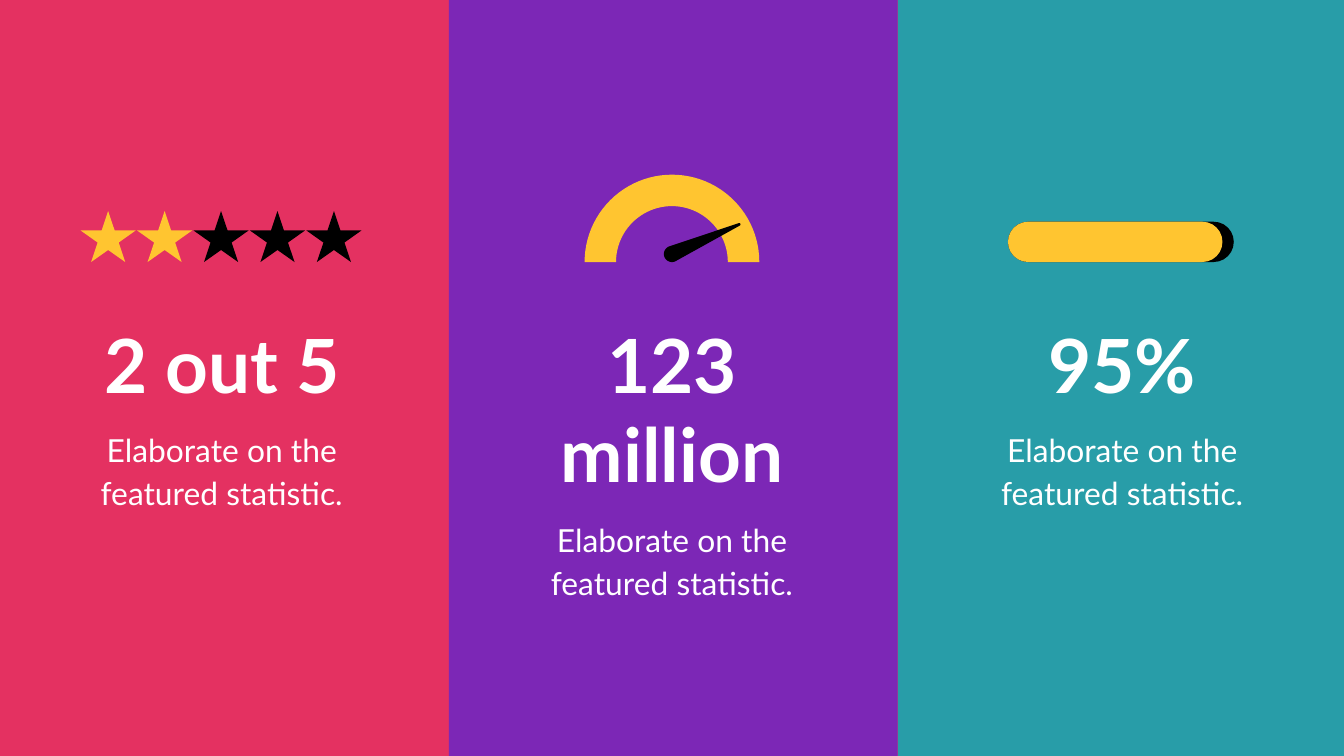
import dataclasses
import math

import pptx
import pptx.dml.color
import pptx.enum.shapes
import pptx.enum.text
import pptx.shapes.shapetree
import pptx.util

Inches = pptx.util.Inches
Color = pptx.dml.color.RGBColor
Shape = pptx.enum.shapes.MSO_SHAPE
GroupShapes = pptx.shapes.shapetree.GroupShapes

RED = Color(0xE4, 0x31, 0x61)
PURPLE = Color(0x7C, 0x27, 0xB6)
TEAL = Color(0x28, 0x9D, 0xA8)
YELLOW = Color(0xFF, 0xC5, 0x30)
BLACK = Color(0x00, 0x00, 0x00)
WHITE = Color(0xFF, 0xFF, 0xFF)

FONT = "Lato"
SLIDE_WIDTH = 10
SLIDE_HEIGHT = SLIDE_WIDTH * 9 / 16
PANEL_WIDTH = 3.34
TEXT_WIDTH = 2.52
TEXT_LEFT, TEXT_STEP = 0.39, 3.35
HEADLINE_TOP, HEADLINE_LINE = 2.37, 0.67
CAPTION_GAP, CAPTION_HEIGHT = 0.12, 0.62
ICON_BOTTOM = 1.95


@dataclasses.dataclass
class Statistic:
    headline: str
    headline_lines: int = 1
    caption: str = "Elaborate on the featured statistic."


STATISTICS = [
    Statistic("2 out 5"),
    Statistic("123 million", headline_lines=2),
    Statistic("95%"),
]


def paint(shape, color: Color) -> None:
    shape.shadow.inherit = False
    shape.fill.solid()
    shape.fill.fore_color.rgb = color
    shape.line.fill.background()


def add_preset(shapes, kind, left: float, top: float, width: float,
               height: float, color: Color):
    shape = shapes.add_shape(kind, Inches(left), Inches(top),
                             Inches(width), Inches(height))
    paint(shape, color)
    return shape


def add_text(page, text: str, *, left: float, top: float, width: float,
             height: float, size: float, bold: bool = False,
             line_spacing: float = 1.0) -> None:
    box = page.shapes.add_textbox(Inches(left), Inches(top),
                                  Inches(width), Inches(height))
    frame = box.text_frame
    frame.margin_left = frame.margin_right = 0
    frame.margin_top = frame.margin_bottom = 0
    frame.word_wrap = True
    frame.auto_size = pptx.enum.text.MSO_AUTO_SIZE.SHAPE_TO_FIT_TEXT
    para = frame.paragraphs[0]
    para.alignment = pptx.enum.text.PP_ALIGN.CENTER
    para.line_spacing = line_spacing
    span = para.add_run()
    span.text = text
    span.font.name = FONT
    span.font.size = pptx.util.Pt(size)
    span.font.bold = bold
    span.font.color.rgb = WHITE


def add_statistic(page, column: int, statistic: Statistic) -> None:
    left = TEXT_LEFT + column * TEXT_STEP
    headline_height = statistic.headline_lines * HEADLINE_LINE
    add_text(page, statistic.headline, left=left, top=HEADLINE_TOP,
             width=TEXT_WIDTH, height=headline_height, size=40, bold=True)
    add_text(page, statistic.caption, left=left,
             top=HEADLINE_TOP + headline_height + CAPTION_GAP,
             width=TEXT_WIDTH, height=CAPTION_HEIGHT, size=17,
             line_spacing=1.15)


def add_rating(shapes: GroupShapes, score: int, total: int) -> None:
    width, height, step = 0.41, 0.38, 0.42
    for index in range(total):
        color = YELLOW if index < score else BLACK
        add_preset(shapes, Shape.STAR_5_POINT, 0.6 + index * step,
                   ICON_BOTTOM - height, width, height, color)


def arc(center: tuple[float, float], radius: float, start: float,
        end: float, steps: int = 24) -> list[tuple[float, float]]:
    angles = (start + (end - start) * step / steps for step in range(steps + 1))
    return [(center[0] + radius * math.cos(angle),
             center[1] + radius * math.sin(angle)) for angle in angles]


def add_gauge(shapes: GroupShapes) -> None:
    diameter = 1.3
    dial = add_preset(shapes, Shape.BLOCK_ARC, 4.35, ICON_BOTTOM - diameter / 2,
                      diameter, diameter, YELLOW)
    dial.adjustments[2] = 0.18

    # Needle: a wide round hub tapering to a narrow round tip
    hub, tip = (5.0, 1.89), (5.5, 1.67)
    direction = math.atan2(tip[1] - hub[1], tip[0] - hub[0])
    quarter = math.pi / 2
    points = arc(hub, 0.06, direction + quarter, direction + 3 * quarter)
    points += arc(tip, 0.01, direction - quarter, direction + quarter)
    outline = [(Inches(x), Inches(y)) for x, y in points]
    builder = shapes.build_freeform(*outline[0])
    builder.add_line_segments(outline[1:], close=True)
    paint(builder.convert_to_shape(), BLACK)


def add_progress(shapes: GroupShapes, share: float) -> None:
    width, height = 1.68, 0.3
    for length, color in ((width, BLACK), (width * share, YELLOW)):
        bar = add_preset(shapes, Shape.ROUNDED_RECTANGLE, 7.5,
                         ICON_BOTTOM - height, length, height, color)
        bar.adjustments[0] = 0.5


def main() -> None:
    deck = pptx.Presentation()
    deck.slide_width = Inches(SLIDE_WIDTH)
    deck.slide_height = Inches(SLIDE_HEIGHT)
    page = deck.slides.add_slide(deck.slide_layouts.get_by_name("Blank"))

    # Coloured panels; the first one is the background
    page.background.fill.solid()
    page.background.fill.fore_color.rgb = RED
    for column, color in enumerate((PURPLE, TEAL), start=1):
        left = column * PANEL_WIDTH
        add_preset(page.shapes, Shape.RECTANGLE, left, 0,
                   min(PANEL_WIDTH, SLIDE_WIDTH - left), SLIDE_HEIGHT, color)

    # Headlines and captions
    for column, statistic in enumerate(STATISTICS):
        add_statistic(page, column, statistic)

    # Icons
    add_rating(page.shapes.add_group_shape().shapes, score=2, total=5)
    add_gauge(page.shapes.add_group_shape().shapes)
    add_progress(page.shapes.add_group_shape().shapes, share=0.95)

    deck.save("out.pptx")


if __name__ == "__main__":
    main()
